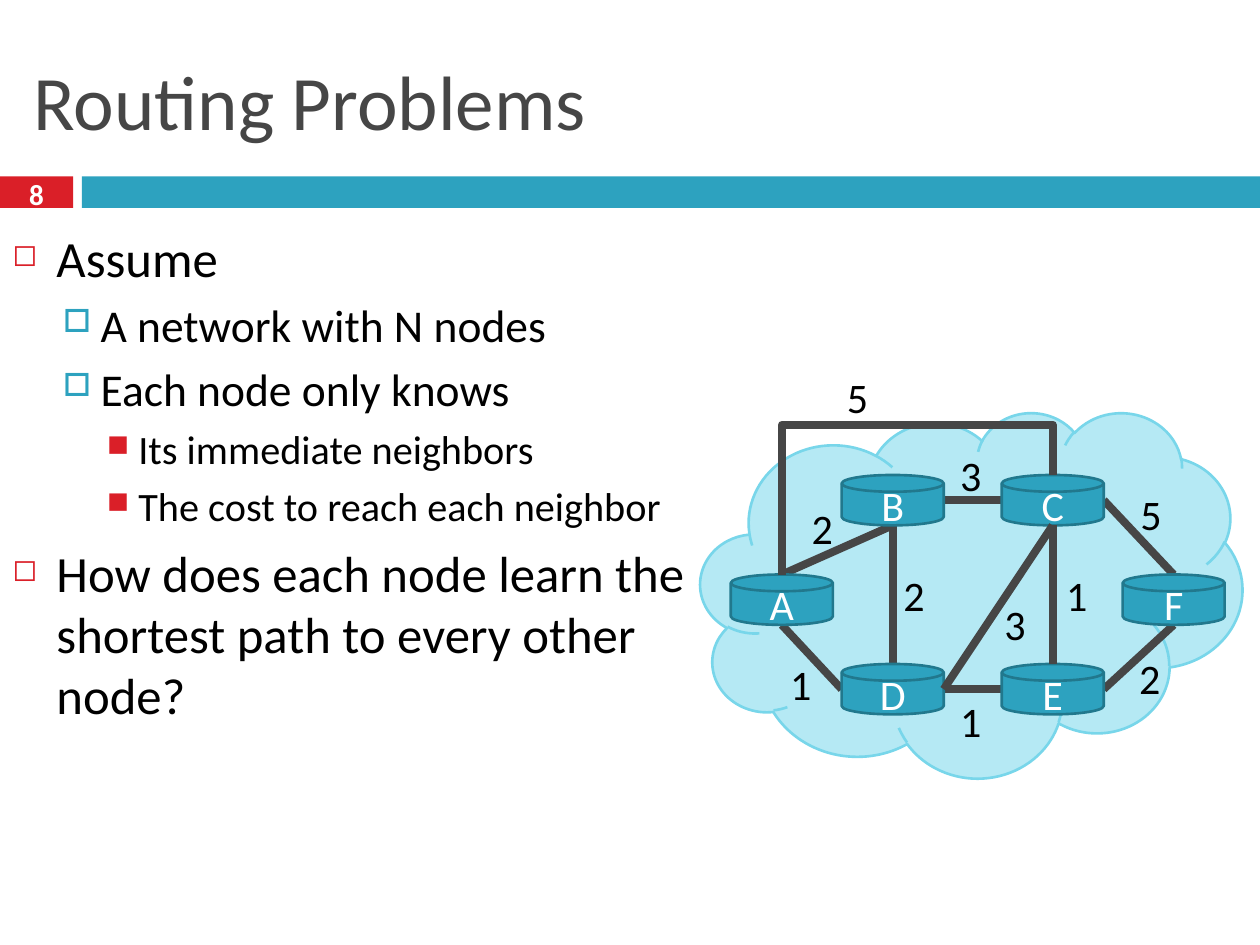
from dataclasses import dataclass
from lxml.etree import SubElement
from pptx import Presentation
from pptx.dml.color import RGBColor
from pptx.enum.shapes import MSO_CONNECTOR, MSO_SHAPE
from pptx.enum.text import MSO_ANCHOR, MSO_AUTO_SIZE, PP_ALIGN
from pptx.oxml.ns import qn
from pptx.util import Inches, Pt

RED, TEAL, GREY = "DA1F28", "2DA2BF", "464646"
BLACK, WHITE = "000000", "FFFFFF"
NODE_WIDTH, NODE_HEIGHT = 0.81, 0.4

# Left and top of each router
NODES = {"A": (5.8, 4.56), "B": (6.68, 3.77), "C": (7.95, 3.77),
         "D": (6.68, 5.27), "E": (7.95, 5.27), "F": (8.91, 4.56)}
# Each link joins one side of a router to one side of another
LINKS_BEHIND = [("F", "bottom", "E", "right"), ("C", "right", "F", "top"),
                ("B", "right", "C", "left"), ("E", "left", "D", "right"),
                ("A", "bottom", "D", "left"), ("A", "top", "B", "bottom"),
                ("D", "top", "B", "bottom")]
LINKS_IN_FRONT = [("C", "bottom", "D", "right"), ("C", "bottom", "E", "top")]
COSTS = [("5", 6.61, 2.9), ("2", 6.33, 3.94), ("3", 7.51, 3.52),
         ("5", 8.94, 3.83), ("2", 8.93, 5.13), ("1", 7.51, 5.47),
         ("1", 6.16, 5.18), ("2", 7.06, 4.47), ("3", 7.86, 4.7),
         ("1", 8.35, 4.47)]

LEVELS = [
    dict(indent=0.35, hanging=0.35, before=7, size=29, bullet="◻", color=RED, scale=60),
    dict(indent=0.7, hanging=0.3, before=5.5, size=26, bullet="□", color=TEAL, scale=70),
    dict(indent=1, hanging=0.25, before=5, size=23, bullet="■", color=RED, scale=75),
]
OUTLINE = [
    (0, "Assume"),
    (1, "A network with N nodes"),
    (1, "Each node only knows"),
    (2, "Its immediate neighbors"),
    (2, "The cost to reach each neighbor"),
    (0, "How does each node learn the shortest path to every other node?"),
]


def rgb(value):
    return RGBColor.from_string(value)


def port(node, side):
    """Return the point in the middle of one side of a router."""
    left, top = NODES[node]
    across, down = {"top": (0.5, 0), "bottom": (0.5, 1),
                    "left": (0, 0.5), "right": (1, 0.5)}[side]
    return left + across * NODE_WIDTH, top + down * NODE_HEIGHT


@dataclass
class Page:
    slide: object
    font: str = "Calibri"
    link_width: float = 4.5

    def add_span(self, para, text, size, color, bold=False):
        span = para.add_run()
        span.text = text
        for name, value in dict(name=self.font, size=Pt(size), bold=bold).items():
            setattr(span.font, name, value)
        span.font.color.rgb = rgb(color)

    def shape(self, kind, left, top, width, height, fill, line=None):
        shape = self.slide.shapes.add_shape(
            kind, Inches(left), Inches(top), Inches(width), Inches(height))
        shape.shadow.inherit = False
        shape.fill.solid()
        shape.fill.fore_color.rgb = rgb(fill)
        if line:
            shape.line.color.rgb = rgb(line)
            shape.line.width = Pt(1.5)
        else:
            shape.line.fill.background()
        return shape

    def text(self, left, top, width, height, text="", size=24, color=BLACK,
             bold=False, align=PP_ALIGN.CENTER, **frame_format):
        box = self.slide.shapes.add_textbox(
            Inches(left), Inches(top), Inches(width), Inches(height))
        frame = box.text_frame
        for name, value in {"word_wrap": True, **frame_format}.items():
            setattr(frame, name, value)
        if text:
            frame.paragraphs[0].alignment = align
            self.add_span(frame.paragraphs[0], text, size, color, bold)
        return frame

    def outline(self, frame, items):
        """Fill a text frame with bulleted paragraphs."""
        for number, (level, text) in enumerate(items):
            style = LEVELS[level]
            para = frame.add_paragraph() if number else frame.paragraphs[0]
            para.level = level
            para.space_before = Pt(style["before"])
            properties = para._p.get_or_add_pPr()
            properties.set("marL", str(Inches(style["indent"])))
            properties.set("indent", str(-Inches(style["hanging"])))
            color = SubElement(properties, qn("a:buClr"))
            SubElement(color, qn("a:srgbClr"), val=style["color"])
            SubElement(properties, qn("a:buSzPct"), val=str(style["scale"] * 1000))
            SubElement(properties, qn("a:buChar"), char=style["bullet"])
            self.add_span(para, text, style["size"], BLACK)

    def line(self, start, end, kind=MSO_CONNECTOR.STRAIGHT):
        line = self.slide.shapes.add_connector(
            kind, *(Inches(value) for value in (*start, *end)))
        line.line.color.rgb = rgb(GREY)
        line.line.width = Pt(self.link_width)
        SubElement(line._element.spPr, qn("a:effectLst"))
        return line

    def detour(self, start, end, rise):
        """Draw a bent link that climbs above start, then drops to end."""
        middle_x, middle_y = (start[0] + end[0]) / 2, (start[1] + end[1]) / 2
        half_width, half_height = (start[1] - end[1]) / 2, (end[0] - start[0]) / 2
        # A quarter turn makes the first leg vertical
        line = self.line((middle_x + half_width, middle_y + half_height),
                         (middle_x - half_width, middle_y - half_height),
                         MSO_CONNECTOR.ELBOW)
        properties = line._element.spPr
        properties.find(qn("a:xfrm")).set("rot", "5400000")
        geometry = properties.find(qn("a:prstGeom"))
        adjustments = geometry.find(qn("a:avLst"))
        if adjustments is None:
            adjustments = SubElement(geometry, qn("a:avLst"))
        ratio = round(rise / (start[1] - end[1]) * 100000)
        SubElement(adjustments, qn("a:gd"), name="adj1", fmla=f"val {ratio}")

    def links(self, links):
        for first, first_side, second, second_side in links:
            self.line(port(first, first_side), port(second, second_side))

    def router(self, name):
        disk = self.shape(MSO_SHAPE.FLOWCHART_MAGNETIC_DISK, *NODES[name],
                          NODE_WIDTH, NODE_HEIGHT, TEAL, "21788D")
        frame = disk.text_frame
        frame.vertical_anchor = MSO_ANCHOR.MIDDLE
        frame.paragraphs[0].alignment = PP_ALIGN.CENTER
        self.add_span(frame.paragraphs[0], name, 24, WHITE)


def main():
    deck = Presentation()
    deck.slide_width, deck.slide_height = Inches(10), Inches(7.5)
    page = Page(deck.slides.add_slide(deck.slide_layouts[6]))

    page.shape(MSO_SHAPE.RECTANGLE, 0, 1.4, 0.58, 0.25, RED)
    page.shape(MSO_SHAPE.RECTANGLE, 0.65, 1.4, 9.35, 0.25, TEAL)
    page.text(0.17, 0.25, 9.67, 1.08, "Routing Problems", 44, GREY,
              align=PP_ALIGN.LEFT, vertical_anchor=MSO_ANCHOR.MIDDLE)
    page.outline(page.text(0, 1.75, 5.8, 5.58), OUTLINE)

    page.shape(MSO_SHAPE.CLOUD, 5.56, 3.27, 4.3, 2.9, "B5E9F4", "78D6EA")
    page.links(LINKS_BEHIND)
    for name in NODES:
        page.router(name)
    page.links(LINKS_IN_FRONT)
    page.detour(port("A", "top"), port("C", "top"), rise=1.19)
    for cost, left, top in COSTS:
        page.text(left, top, 0.39, 0.5, cost, word_wrap=False,
                  auto_size=MSO_AUTO_SIZE.SHAPE_TO_FIT_TEXT)

    page.text(0, 1.37, 0.58, 0.33, "8", 16.6, WHITE, bold=True,
              vertical_anchor=MSO_ANCHOR.MIDDLE)
    deck.save("out.pptx")


if __name__ == "__main__":
    main()
